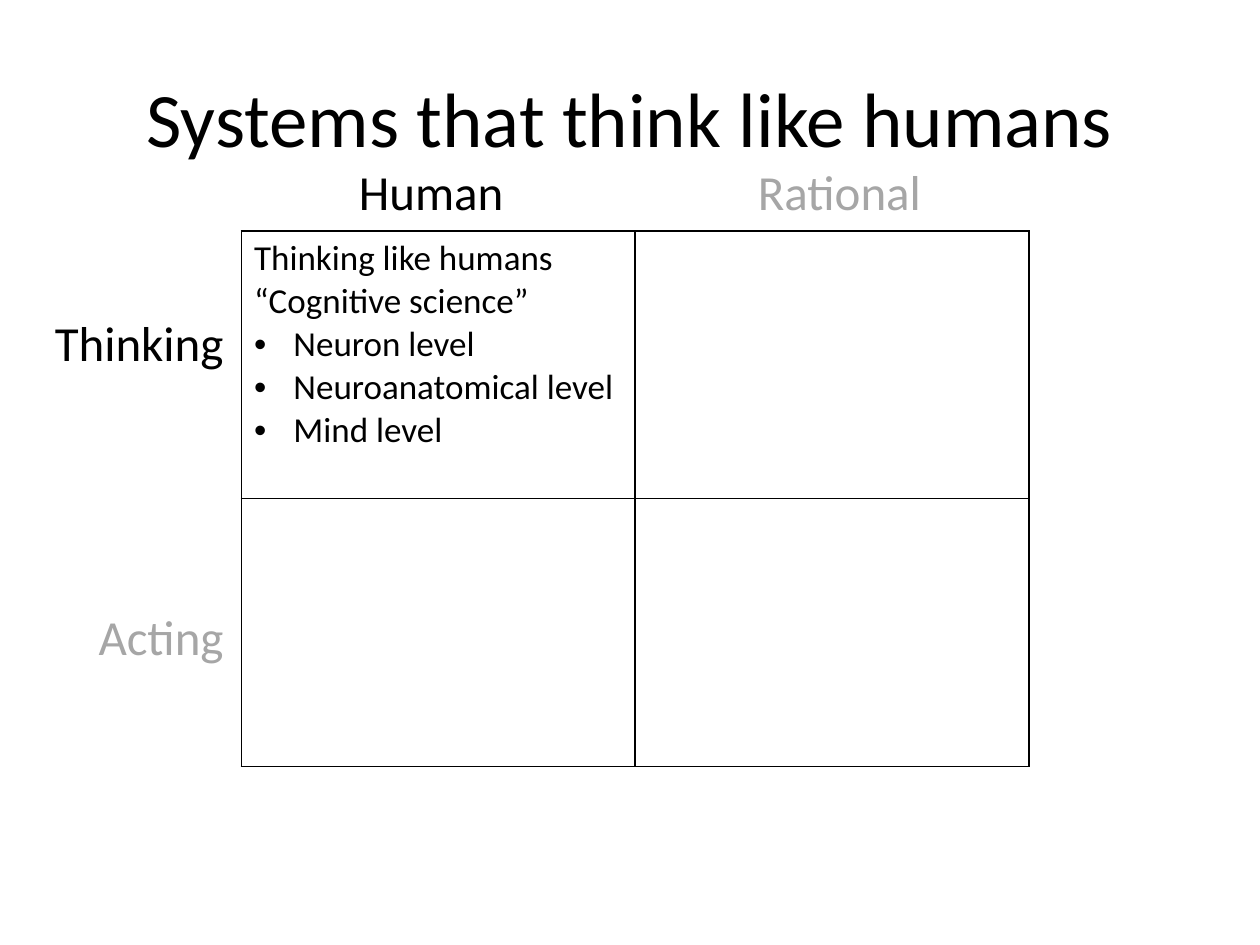
from lxml import etree
from pptx import Presentation
from pptx.dml.color import RGBColor
from pptx.enum import text
from pptx.oxml.ns import qn
from pptx.util import Pt

FONT = "Calibri"
BLACK, GREY = "000000", "A6A6A6"
LABEL_SIZE = 28


def color(hex_value):
    return RGBColor.from_string(hex_value)


def style(paragraph, size, hex_value=BLACK):
    font = paragraph.font
    font.name, font.size = FONT, Pt(size)
    font.color.rgb = color(hex_value)


def add_frame(slide, left, top, width, height):
    box = slide.shapes.add_textbox(Pt(left), Pt(top), Pt(width), Pt(height))
    box.text_frame.word_wrap = True
    return box.text_frame


def add_title(slide, title):
    frame = add_frame(slide, 36, 21.6, 648, 90)
    frame.vertical_anchor = text.MSO_ANCHOR.MIDDLE
    heading = frame.paragraphs[0]
    heading.text = title
    heading.alignment = text.PP_ALIGN.CENTER
    style(heading, 44)


def add_column_labels(slide, labels, tab_position):
    heading = add_frame(slide, 198, 88.6, 353.5, 41).paragraphs[0]
    tabs = etree.SubElement(heading._p.get_or_add_pPr(), qn("a:tabLst"))
    etree.SubElement(tabs, qn("a:tab"), pos=str(Pt(tab_position)), algn="l")
    for index, (label, hex_value) in enumerate(labels):
        run = heading.add_run()
        run.text = "\t" * index + label
        run.font.name, run.font.size = FONT, Pt(LABEL_SIZE)
        run.font.color.rgb = color(hex_value)


def add_row_labels(slide, labels, gap):
    frame = add_frame(slide, 23.8, 175, 111, 211)
    for index, (label, hex_value) in enumerate(labels):
        row_label = frame.add_paragraph() if index else frame.paragraphs[0]
        row_label.text = label
        row_label.alignment = text.PP_ALIGN.RIGHT
        row_label.space_before = Pt(gap * index)
        style(row_label, LABEL_SIZE, hex_value)


def outline_cell(cell):
    properties = cell._tc.get_or_add_tcPr()
    for side in ("a:lnL", "a:lnR", "a:lnT", "a:lnB"):
        line = etree.SubElement(properties, qn(side), w=str(Pt(1)))
        fill = etree.SubElement(line, qn("a:solidFill"))
        etree.SubElement(fill, qn("a:srgbClr"), val=BLACK)
    cell.fill.background()


def add_bullet(paragraph, indent):
    properties = paragraph._p.get_or_add_pPr()
    properties.set("marL", str(Pt(indent)))
    properties.set("indent", str(-Pt(indent)))
    etree.SubElement(properties, qn("a:buFont"), typeface="Arial")
    etree.SubElement(properties, qn("a:buChar"), char="•")


def fill_cell(cell, statements, bullets):
    frame = cell.text_frame
    frame.text = "\n".join(statements + bullets)
    for index, paragraph in enumerate(frame.paragraphs):
        style(paragraph, 20)
        if index >= len(statements):
            add_bullet(paragraph, 22.5)


def add_matrix(slide):
    matrix = slide.shapes.add_table(
        2, 2, Pt(138), Pt(132), Pt(450), Pt(306)).table
    matrix.first_row = matrix.horz_banding = False
    for cell in matrix.iter_cells():
        outline_cell(cell)
    fill_cell(matrix.cell(0, 0),
              ["Thinking like humans", "“Cognitive science”"],
              ["Neuron level", "Neuroanatomical level", "Mind level"])


def main():
    deck = Presentation()
    deck.slide_width, deck.slide_height = Pt(720), Pt(540)
    slide = deck.slides.add_slide(deck.slide_layouts[6])

    # Title and two-by-two matrix
    add_title(slide, "Systems that think like humans")
    add_matrix(slide)

    # Axis labels, with the inactive half of each axis greyed out
    add_column_labels(slide, [("Human", BLACK), ("Rational", GREY)], 228)
    add_row_labels(slide, [("Thinking", BLACK), ("Acting", GREY)], 134.5)

    deck.save("out.pptx")


if __name__ == "__main__":
    main()
